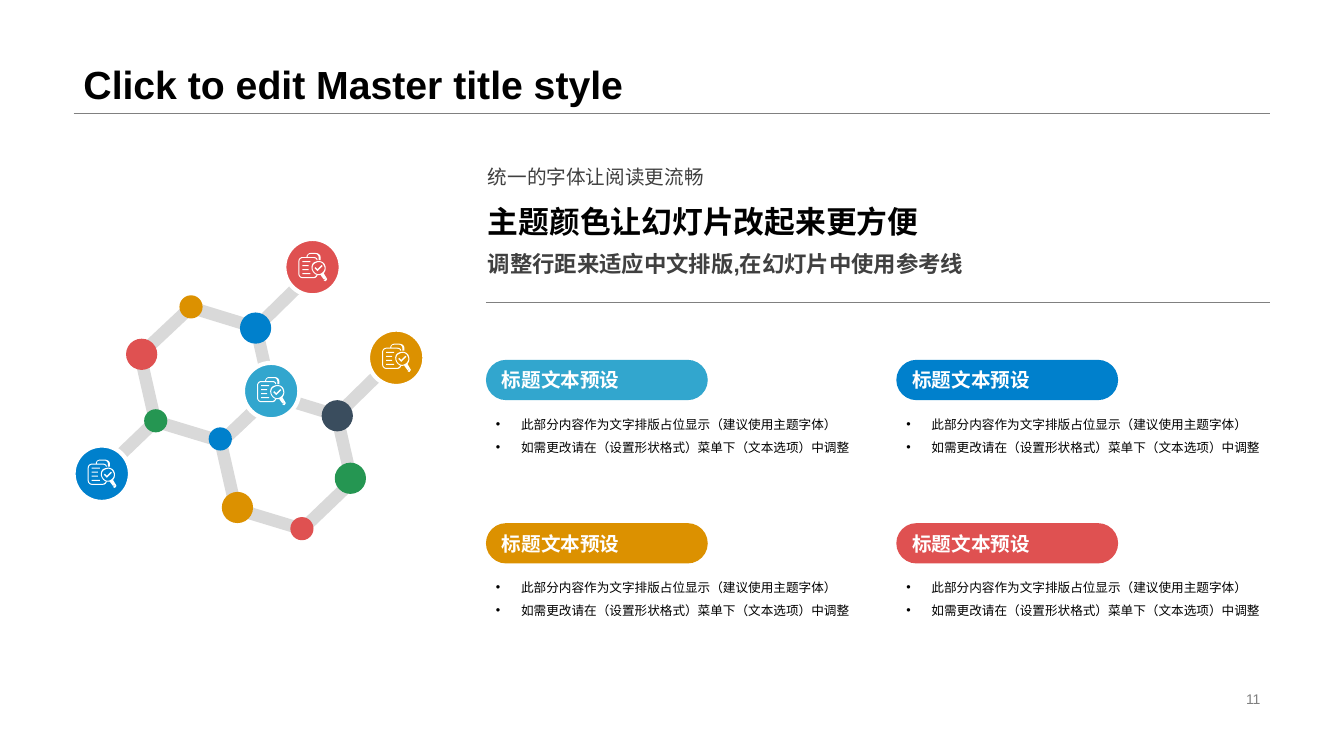
import pptx
import pptx.util
import pptx.dml.color
import pptx.enum.lang
import pptx.enum.shapes
import pptx.enum.text
import lxml.etree
from pptx.oxml.ns import qn

Inches, Pt = pptx.util.Inches, pptx.util.Pt
RGB = pptx.dml.color.RGBColor.from_string
SHAPE = pptx.enum.shapes.MSO_SHAPE
STRAIGHT = pptx.enum.shapes.MSO_CONNECTOR.STRAIGHT
ALIGN = pptx.enum.text.PP_ALIGN
ANCHOR = pptx.enum.text.MSO_ANCHOR
CHINESE = pptx.enum.lang.MSO_LANGUAGE_ID.SIMPLIFIED_CHINESE

COLORS = {
    "sky": "32A6CE", "blue": "0080CC", "amber": "DC9100", "red": "DF5151",
    "green": "259652", "slate": "3A4D5E", "bond": "D9D9D9", "rule": "808080",
    "dark": "404040", "black": "000000", "white": "FFFFFF",
}

prs = pptx.Presentation()
prs.slide_width, prs.slide_height = Inches(13.33), Inches(7.5)
slide = prs.slides.add_slide(prs.slide_layouts[6])
shapes = slide.shapes


def paint(s, fill=None, line=None, width=0):
    """Set fill and outline, and drop the shadow."""
    if hasattr(s, "fill"):
        s.shadow.inherit = False
        if fill:
            s.fill.solid()
            s.fill.fore_color.rgb = RGB(COLORS[fill])
        else:
            s.fill.background()
    else:
        lxml.etree.SubElement(s._element.spPr, qn("a:effectLst"))
    if line:
        s.line.color.rgb = RGB(COLORS[line])
        s.line.width = Pt(width)
    else:
        s.line.fill.background()


def write(s, anchor, paragraphs, spacing=1.0, align=ALIGN.LEFT, bullet=None):
    """Fill a shape with (text, color, font values) paragraphs."""
    tf = s.text_frame
    tf.word_wrap = True
    tf.vertical_anchor = anchor
    for i, (text, color, font) in enumerate(paragraphs):
        p = tf.paragraphs[0] if i == 0 else tf.add_paragraph()
        p.alignment, p.line_spacing = align, spacing
        if bullet:
            pPr = p._p.get_or_add_pPr()
            pPr.set("marL", str(Inches(0.25)))
            pPr.set("indent", str(-Inches(0.25)))
            lxml.etree.SubElement(pPr, qn("a:buFont"), typeface="Arial")
            lxml.etree.SubElement(pPr, qn("a:buChar"), char=bullet)
            tabs = lxml.etree.SubElement(pPr, qn("a:tabLst"))
            lxml.etree.SubElement(tabs, qn("a:tab"), pos=str(Inches(0.25)), algn="l")
        r = p.add_run()
        r.text = text
        r.font.color.rgb = RGB(COLORS[color])
        for name, value in {"name": "Arial", **font}.items():
            setattr(r.font, name, value)


# Title, page number and introduction
text_boxes = [
    ((0.73, 0, 11.87, 1.12), ANCHOR.BOTTOM, 0.9, ALIGN.LEFT,
     [("Click to edit Master title style", "black", {"size": Pt(28), "bold": True})]),
    ((9.42, 6.82, 3.18, 0.23), ANCHOR.MIDDLE, 1.0, ALIGN.RIGHT,
     [("11", "rule", {"size": Pt(10)})]),
    ((4.74, 1.49, 5.74, 1.34), ANCHOR.TOP, 1.4, ALIGN.JUSTIFY,
     [("统一的字体让阅读更流畅", "dark", {"size": Pt(14), "language_id": CHINESE}),
      ("主题颜色让幻灯片改起来更方便", "black",
       {"size": Pt(22), "bold": True, "language_id": CHINESE}),
      ("调整行距来适应中文排版,在幻灯片中使用参考线", "dark",
       {"size": Pt(16), "bold": True, "language_id": CHINESE})]),
]
for box, anchor, spacing, align, paragraphs in text_boxes:
    write(shapes.add_textbox(*map(Inches, box)), anchor, paragraphs, spacing, align)

# Four headed blocks, two by two
heading = [("标题文本预设", "white", {"size": Pt(14), "bold": True, "language_id": CHINESE})]
notes = [(text, "black", {"size": Pt(9), "language_id": CHINESE}) for text in (
    "此部分内容作为文字排版占位显示（建议使用主题字体）",
    "如需更改请在（设置形状格式）菜单下（文本选项）中调整")]
for i, color in enumerate(["sky", "blue", "amber", "red"]):
    left, top = 4.82 + i % 2 * 4.07, 3.57 + i // 2 * 1.62
    pill = shapes.add_shape(SHAPE.ROUNDED_RECTANGLE, *map(Inches, (left, top, 2.2, 0.4)))
    pill.adjustments[0] = 0.5
    paint(pill, color)
    write(pill, ANCHOR.MIDDLE, heading)
    body = shapes.add_shape(SHAPE.SNIP_2_SAME_RECTANGLE,
                            *map(Inches, (left, top + 0.44, 3.71, 0.67)))
    body.adjustments[0] = body.adjustments[1] = 0
    paint(body)
    write(body, ANCHOR.TOP, notes, 1.5, bullet="•")

# Molecule rings
ring = [(2.2, 4.38), (1.54, 4.18), (1.39, 3.52), (1.89, 3.05), (2.54, 3.25), (2.69, 3.91)]
for dx, dy in [(0, 0), (0.8, 0.87)]:
    corners = [(Inches(x + dx), Inches(y + dy)) for x, y in ring]
    builder = shapes.build_freeform(*corners[0])
    builder.add_line_segments(corners[1:], close=True)
    paint(builder.convert_to_shape(), None, "bond", 8.88)

# Divider lines and molecule arms
lines = [
    (0.73, 1.12, 12.6, 1.12, "rule", 0.25),
    (4.82, 3, 12.6, 3, "rule", 0.25),
    (2.54, 3.25, 3.02, 2.78, "bond", 8.88),
    (3.35, 4.11, 3.83, 3.64, "bond", 8.88),
    (1.04, 4.66, 1.53, 4.19, "bond", 8.88),
]
for *ends, color, width in lines:
    paint(shapes.add_connector(STRAIGHT, *map(Inches, ends)), None, color, width)

# Atoms: left, top, diameter, color
atoms = [
    (1.25, 3.36, 0.31, "red"), (2.38, 3.1, 0.31, "blue"), (3.19, 3.97, 0.31, "slate"),
    (3.32, 4.59, 0.31, "green"), (2.2, 4.88, 0.31, "amber"), (1.78, 2.93, 0.23, "amber"),
    (1.43, 4.06, 0.23, "green"), (2.07, 4.24, 0.23, "blue"), (2.88, 5.13, 0.23, "red"),
]
for left, top, size, color in atoms:
    paint(shapes.add_shape(SHAPE.OVAL, *map(Inches, (left, top, size, size))), color)

# Icon outlines in hundredths of an inch: pairs are corners, sixes are Bézier curves
icon = [
    # Folder
    [(18, 22), (19, 22), (18, 24, 17, 25, 15, 25), (4, 25), (2, 25, 0, 23, 0, 21), (0, 8),
     (0, 6, 2, 4, 4, 4), (8, 4), (8, 2, 10, 0, 12, 0), (17, 0), (20, 0, 22, 2, 22, 4),
     (22, 7), (20, 7), (20, 4), (20, 3, 19, 1, 17, 1), (12, 1), (10, 1, 9, 2, 9, 4),
     (15, 4), (17, 4, 19, 5, 19, 7), (18, 7), (18, 6, 17, 5, 15, 5), (4, 5),
     (3, 5, 1, 6, 1, 8), (1, 21), (1, 23, 3, 24, 4, 24), (15, 24), (16, 24, 17, 23, 18, 22)],
    # Lens, rim and glass
    [(24, 21), (20, 23, 16, 22, 14, 18), (12, 15, 13, 10, 16, 9), (20, 7, 24, 8, 26, 11),
     (28, 15, 27, 19, 24, 21)],
    [(23, 20), (26, 18, 27, 15, 25, 12), (24, 9, 20, 8, 17, 10), (14, 11, 13, 15, 15, 18),
     (17, 21, 20, 22, 23, 20)],
    # Handle and its tip
    [(25, 20), (22, 22), (25, 26), (28, 25)],
    [(28, 25), (25, 27), (26, 28, 27, 28, 27, 28), (28, 27, 29, 26, 28, 25)],
    # Text lines and tick
    *[[(4, y), (right, y), (right, y + 1), (4, y + 1)]
      for y, right in [(8, 12), (12, 10), (16, 10), (20, 12)]],
    [(19, 16), (17, 14), (16, 15), (19, 18), (24, 13), (23, 12)],
]
contours = []
for segments in icon:
    points = []
    for segment in segments:
        if len(segment) == 2:
            points.append(segment)
            continue
        curve = [points[-1], segment[:2], segment[2:4], segment[4:]]
        for t in (0.2, 0.4, 0.6, 0.8, 1):
            weights = [(1 - t) ** 3, 3 * t * (1 - t) ** 2, 3 * t * t * (1 - t), t ** 3]
            points.append(tuple(sum(w * c[axis] for w, c in zip(weights, curve))
                                for axis in (0, 1)))
    contours.append(points)

# Icon discs
for left, top, color in [(2.41, 3.6, "sky"), (0.73, 4.42, "blue"),
                         (3.65, 3.27, "amber"), (2.82, 2.37, "red")]:
    disc = shapes.add_shape(SHAPE.OVAL, *map(Inches, (left, top, 0.56, 0.56)))
    paint(disc, color, "white", 3)
    builder = None
    for contour in contours:
        points = [(Inches(left + 0.14 + x / 100), Inches(top + 0.14 + y / 100))
                  for x, y in contour]
        if builder is None:
            builder = shapes.build_freeform(*points[0])
        else:
            builder.move_to(*points[0])
        builder.add_line_segments(points[1:], close=True)
    paint(builder.convert_to_shape(), "white")

prs.save("out.pptx")
